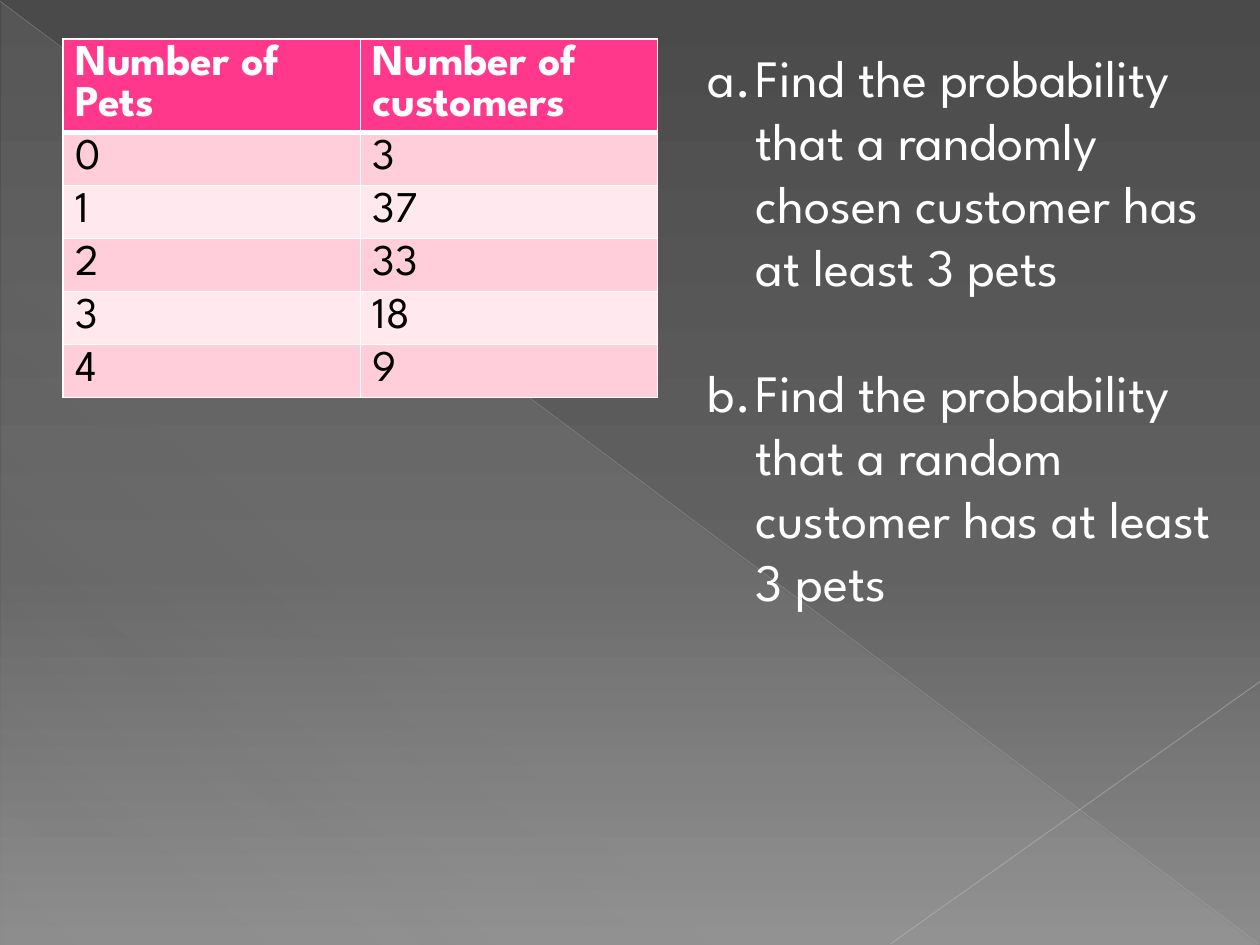
import lxml.etree
import pptx
import pptx.dml.color
import pptx.enum.shapes
import pptx.enum.text
import pptx.oxml.ns
import pptx.util

Inches = pptx.util.Inches
Pt = pptx.util.Pt
qn = pptx.oxml.ns.qn


def color(hex_code):
    return pptx.dml.color.RGBColor.from_string(hex_code)


def add_node(parent, tag, **attributes):
    values = {name: str(value) for name, value in attributes.items()}
    return lxml.etree.SubElement(parent, qn(tag), values)


def add_color(parent, hex_code, opacity=100):
    node = add_node(parent, "a:srgbClr", val=hex_code)
    if opacity < 100:
        add_node(node, "a:alpha", val=opacity * 1000)


class PetSlide:
    font = "League Spartan"
    white = "FFFFFF"
    black = "000000"
    header_pink = "FF388C"
    row_pinks = ("FFCEDA", "FFE8EE")

    def __init__(self, slide):
        self.slide = slide

    def style(self, paragraph, size, hex_code, bold=False):
        paragraph.font.name = self.font
        paragraph.font.size = Pt(size)
        paragraph.font.bold = bold
        paragraph.font.color.rgb = color(hex_code)

    def gradient(self, fill, owner, stops, angle):
        fill.gradient()
        gradient = owner.find(".//" + qn("a:gradFill"))
        stop_list = gradient.find(qn("a:gsLst"))
        for stop in list(stop_list):
            stop_list.remove(stop)
        for position, hex_code, opacity in stops:
            stop = add_node(stop_list, "a:gs", pos=position * 1000)
            add_color(stop, hex_code, opacity)
        direction = gradient.find(qn("a:lin"))
        direction.set("ang", str(angle * 60000))
        direction.set("scaled", "0")

    def background(self, stops, angle):
        fill = self.slide.background.fill
        self.gradient(fill, self.slide._element, stops, angle)

    def triangle(self, left, top, width, height, stops, angle):
        kind = pptx.enum.shapes.MSO_SHAPE.RIGHT_TRIANGLE
        triangle = self.slide.shapes.add_shape(
            kind, Inches(left), Inches(top), Inches(width), Inches(height))
        triangle.shadow.inherit = False
        triangle.line.fill.background()
        self.gradient(triangle.fill, triangle._element, stops, angle)

    def line(self, start, end, hex_code, width, opacity):
        kind = pptx.enum.shapes.MSO_CONNECTOR.STRAIGHT
        points = [Inches(value) for value in (*start, *end)]
        line = self.slide.shapes.add_connector(kind, *points)
        line.line.width = Pt(width)
        line.line.color.rgb = color(hex_code)
        properties = line._element.spPr
        tint = properties.find(".//" + qn("a:srgbClr"))
        add_node(tint, "a:alpha", val=opacity * 1000)
        add_node(properties, "a:effectLst")

    def borders(self, cell, bottom):
        properties = cell._tc.get_or_add_tcPr()
        widths = {"a:lnL": 1, "a:lnR": 1, "a:lnT": 1, "a:lnB": bottom}
        for side, width in widths.items():
            border = add_node(properties, side, w=Pt(width))
            add_color(add_node(border, "a:solidFill"), self.white)

    def table(self, left, top, column_width, header_height, row_height, rows):
        columns = len(rows[0])
        height = header_height + row_height * (len(rows) - 1)
        table = self.slide.shapes.add_table(
            len(rows), columns, Inches(left), Inches(top),
            Inches(column_width * columns), Inches(height)).table
        table.horz_banding = False
        for r, values in enumerate(rows):
            header = r == 0
            table.rows[r].height = Inches(header_height if header else row_height)
            pink = self.header_pink if header else self.row_pinks[(r - 1) % 2]
            for c, value in enumerate(values):
                cell = table.cell(r, c)
                self.borders(cell, 3 if header else 1)
                cell.fill.solid()
                cell.fill.fore_color.rgb = color(pink)
                cell.text = value
                self.style(cell.text_frame.paragraphs[0], 25,
                           self.white if header else self.black, header)

    def questions(self, left, top, width, height, questions):
        frame = self.slide.shapes.add_textbox(
            Inches(left), Inches(top), Inches(width), Inches(height)).text_frame
        frame.word_wrap = True
        frame.auto_size = pptx.enum.text.MSO_AUTO_SIZE.SHAPE_TO_FIT_TEXT
        for index, question in enumerate(questions):
            paragraph = frame.add_paragraph() if index else frame.paragraphs[0]
            paragraph.text = question
            paragraph.space_before = Pt(36 if index else 0)
            properties = paragraph._p.get_or_add_pPr()
            properties.set("marL", str(Inches(0.38)))
            properties.set("indent", str(-Inches(0.38)))
            add_node(properties, "a:buAutoNum", type="alphaLcPeriod")
            self.style(paragraph, 30, self.white)


def main():
    deck = pptx.Presentation()
    deck.slide_width = Inches(10)
    deck.slide_height = Inches(7.5)
    pets = PetSlide(deck.slides.add_slide(deck.slide_layouts[6]))

    pets.background(
        [(0, "4A4A4A", 100), (60, "626262", 100), (100, "8C8C8C", 100)], 90)
    pets.triangle(
        0.01, 0.02, 9.98, 7.48,
        [(0, "D2D2D2", 10), (70, "D2D2D2", 8), (100, "D2D2D2", 1)], 133)
    pets.line((0, 0.01), (9.99, 7.49), "BFBFBF", 0.39, 35)
    pets.line((10, 5.41), (7.07, 7.49), "C6C6C6", 0.47, 45)
    pets.table(0.5, 0.31, 2.36, 0.74, 0.42, [
        ("Number of Pets", "Number of customers"),
        ("0", "3"),
        ("1", "37"),
        ("2", "33"),
        ("3", "18"),
        ("4", "9"),
    ])
    pets.questions(5.52, 0.31, 4.28, 5.15, [
        "Find the probability that a randomly chosen customer has at least 3 pets",
        "Find the probability that a random customer has at least 3 pets",
    ])
    deck.save("out.pptx")


if __name__ == "__main__":
    main()
